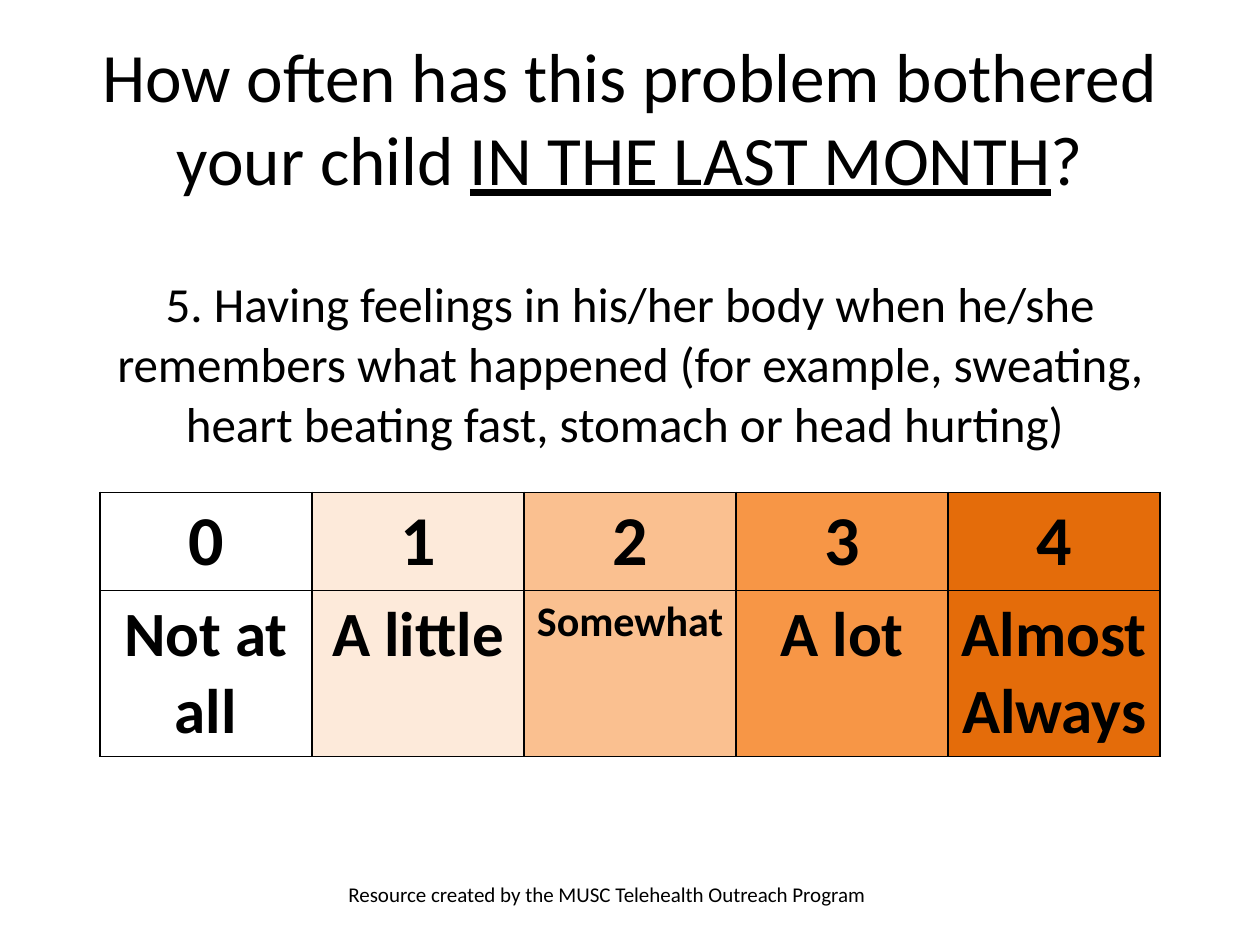
from dataclasses import dataclass
from typing import Any

from lxml import etree
from pptx import Presentation
from pptx.dml.color import RGBColor
from pptx.enum import text
from pptx.oxml import ns
from pptx.util import Pt

COLOURS = {
    "ink": "000000",
    "white": "FFFFFF",
    "pale": "FDEADA",
    "light": "FAC090",
    "medium": "F79646",
    "strong": "E46C0A",
}
CENTER = text.PP_ALIGN.CENTER
LEFT = text.PP_ALIGN.LEFT


@dataclass
class SlideBuilder:
    slide: Any
    font: str = "Calibri"
    ink: str = "ink"

    def add_runs(self, frame, runs, size, align=CENTER, bold=False):
        """Fill a frame's first paragraph with (wording, underlined) runs."""
        paragraph = frame.paragraphs[0]
        paragraph.alignment = align
        for wording, underlined in runs:
            run = paragraph.add_run()
            run.text = wording
            font = run.font
            font.name, font.size, font.bold = self.font, Pt(size), bold
            font.underline = underlined
            font.color.rgb = RGBColor.from_string(COLOURS[self.ink])

    def text_box(self, box, runs, size, align=CENTER,
                 anchor=text.MSO_ANCHOR.TOP):
        shape = self.slide.shapes.add_textbox(*map(Pt, box))
        frame = shape.text_frame
        frame.word_wrap = True
        frame.vertical_anchor = anchor
        self.add_runs(frame, runs, size, align)

    def table(self, left, top, column_width, columns, row_heights):
        shape = self.slide.shapes.add_table(
            len(row_heights), columns, Pt(left), Pt(top),
            Pt(column_width * columns), Pt(sum(row_heights)))
        table = shape.table
        table.first_row = table.horz_banding = False
        for column in table.columns:
            column.width = Pt(column_width)
        for row, height in zip(table.rows, row_heights):
            row.height = Pt(height)
        return table

    def cell(self, cell, wording, size, fill=None, border=None, bold=False):
        self.add_runs(cell.text_frame, [(wording, False)], size, bold=bold)
        self.borders(cell, border)
        if fill:
            cell.fill.solid()
            cell.fill.fore_color.rgb = RGBColor.from_string(COLOURS[fill])
        else:
            cell.fill.background()

    def borders(self, cell, colour):
        properties = cell._tc.get_or_add_tcPr()
        for side in ("lnL", "lnR", "lnT", "lnB"):
            line = etree.SubElement(properties, ns.qn(f"a:{side}"), w=str(Pt(1)))
            if colour:
                solid = etree.SubElement(line, ns.qn("a:solidFill"))
                etree.SubElement(solid, ns.qn("a:srgbClr"), val=COLOURS[colour])
            else:
                etree.SubElement(line, ns.qn("a:noFill"))


def main():
    presentation = Presentation()
    presentation.slide_width, presentation.slide_height = Pt(720), Pt(540)
    builder = SlideBuilder(
        presentation.slides.add_slide(presentation.slide_layouts[6]))

    # Title
    builder.text_box(
        (36, 21.6, 648, 90),
        [("How often has this problem bothered your child ", False),
         ("IN THE LAST MONTH", True), ("?", False)],
        39.6, anchor=text.MSO_ANCHOR.MIDDLE)

    # Credit line
    builder.text_box(
        (192, 500.4, 324, 28.8),
        [("Resource created by the MUSC Telehealth Outreach Program", False)],
        12, align=LEFT)

    # Answer scale
    table_left, answer_width = 57.1, 121.2
    answers = [
        ("Not at all", 36, "white"),
        ("A little", 36, "pale"),
        ("Somewhat", 24, "light"),
        ("A lot", 36, "medium"),
        ("Almost Always", 36, "strong"),
    ]
    scale = builder.table(table_left, 281.3, answer_width, len(answers), [56, 95])
    for score, (label, size, fill) in enumerate(answers):
        for row, (wording, points) in enumerate([(str(score), 40), (label, size)]):
            builder.cell(scale.cell(row, score), wording, points, fill,
                         border="ink", bold=True)

    # Question
    question = builder.table(
        table_left, 157.7, answer_width * len(answers), 1, [101])
    question_cell = question.cell(0, 0)
    question_cell.margin_left = question_cell.margin_right = Pt(3.6)
    question_cell.margin_top = question_cell.margin_bottom = Pt(0)
    builder.cell(
        question_cell,
        "5. Having feelings in his/her body when he/she remembers what happened "
        "(for example, sweating, heart beating fast, stomach or head hurting) ",
        28)

    presentation.save("out.pptx")


if __name__ == "__main__":
    main()
